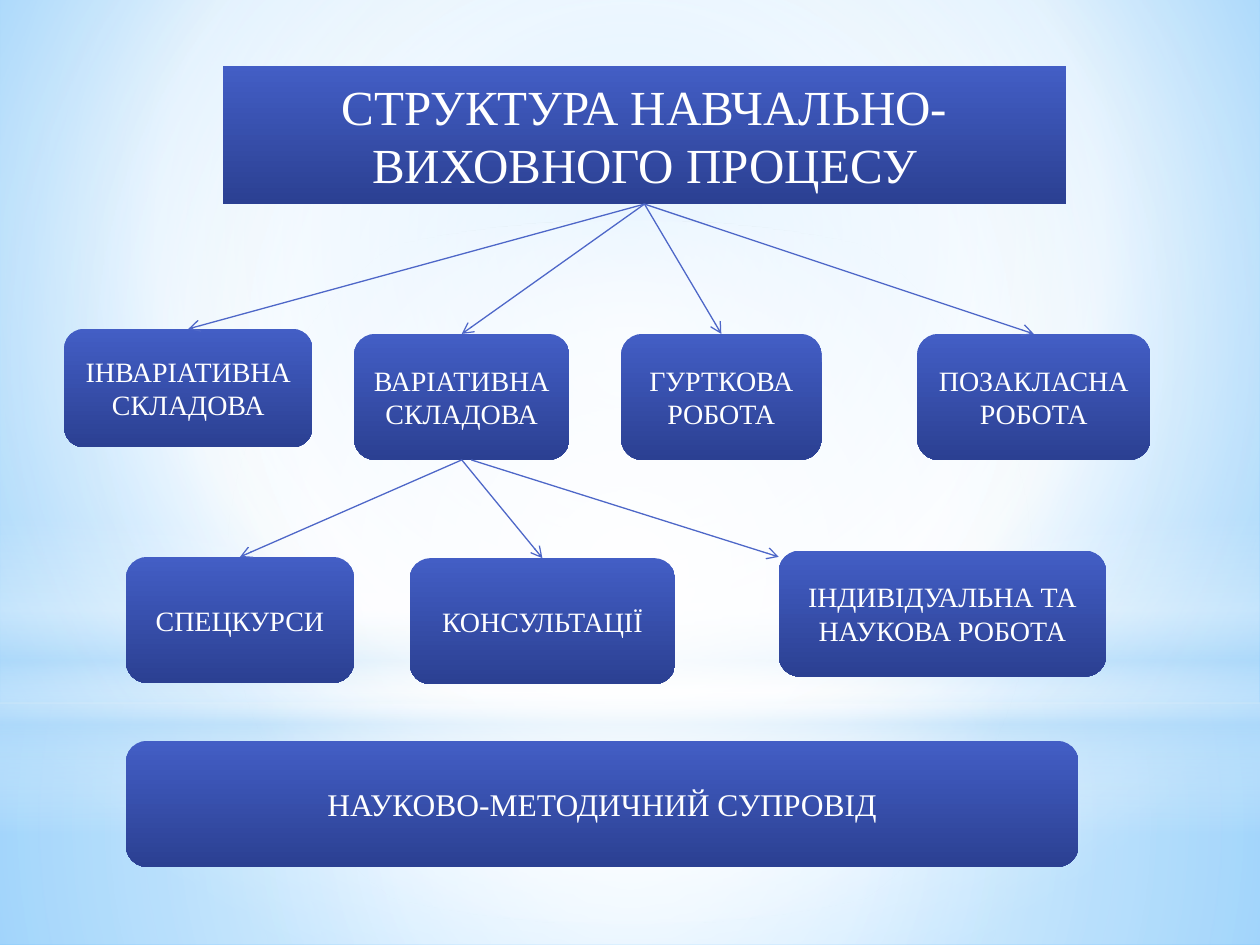
from lxml.etree import SubElement
from pptx import Presentation
from pptx.dml.color import RGBColor
from pptx.enum.shapes import MSO_CONNECTOR, MSO_SHAPE
from pptx.enum.text import MSO_ANCHOR, MSO_AUTO_SIZE, PP_ALIGN
from pptx.oxml import parse_xml
from pptx.oxml.ns import nsdecls, qn
from pptx.util import Inches, Pt

FONT = "Times New Roman"
WHITE = "FFFFFF"
ARROW_BLUE = "4E67C8"
SKY = "B4DCFA"
BOX_STOPS = [(0, "435EC5", 100), (100, "2B4092", 100)]


def paint_gradient(fill, stops, focus=None):
    marks = "".join(
        f'<a:gs pos="{position * 1000}"><a:srgbClr val="{color}">'
        f'<a:alpha val="{opacity * 1000}"/></a:srgbClr></a:gs>'
        for position, color, opacity in stops
    )
    direction = '<a:lin ang="5400000" scaled="0"/>'
    if focus:
        left, top, right, bottom = (share * 1000 for share in focus)
        direction = (
            f'<a:path path="circle"><a:fillToRect l="{left}" t="{top}" '
            f'r="{right}" b="{bottom}"/></a:path>'
        )
    fill.background()
    blank = fill._xPr.find(qn("a:noFill"))
    blank.getparent().replace(blank, parse_xml(
        f'<a:gradFill {nsdecls("a")} rotWithShape="1">'
        f"<a:gsLst>{marks}</a:gsLst>{direction}</a:gradFill>"
    ))


def write_box(box, wording, size):
    paint_gradient(box.fill, BOX_STOPS)
    box.line.fill.background()
    box.shadow.inherit = False
    frame = box.text_frame
    frame.word_wrap = True
    frame.auto_size = MSO_AUTO_SIZE.NONE
    frame.vertical_anchor = MSO_ANCHOR.MIDDLE
    paragraph = frame.paragraphs[0]
    paragraph.alignment = PP_ALIGN.CENTER
    run = paragraph.add_run()
    run.text = wording
    run.font.name = FONT
    run.font.size = Pt(size)
    run.font.color.rgb = RGBColor.from_string(WHITE)


deck = Presentation()
deck.slide_width = Inches(10)
deck.slide_height = Inches(7.5)
column = deck.slide_width / 100
row = deck.slide_height / 75
slide = deck.slides.add_slide(deck.slide_layouts[5])
shapes = slide.shapes

paint_gradient(
    slide.background.fill,
    [(0, "9ED5FF", 100), (60, WHITE, 100), (100, "5BB9FF", 100)],
    (20, 10, 20, 60),
)

center = (50, 50, 50, 50)
backdrop = [
    (MSO_SHAPE.RECTANGLE, 55.8, 19.2, center,
     [(0, WHITE, 91), (37, WHITE, 76), (100, SKY, 79)]),
    (MSO_SHAPE.RECTANGLE, 0, 55.8, center,
     [(0, WHITE, 89), (48, WHITE, 62), (100, SKY, 79)]),
    (MSO_SHAPE.RECTANGLE, 41.2, 25, None,
     [(0, WHITE, 0), (29, WHITE, 30), (45, SKY, 40),
      (55, WHITE, 26), (65, SKY, 60), (100, WHITE, 0)]),
    (MSO_SHAPE.OVAL, 17.5, 55.8, center,
     [(0, WHITE, 100), (56, WHITE, 0)]),
]
for outline, top, height, focus, stops in backdrop:
    glow = shapes.add_shape(
        outline, 0, int(top * row), deck.slide_width, int(height * row)
    )
    paint_gradient(glow.fill, stops, focus)
    glow.line.fill.background()
    glow.shadow.inherit = False

heading = shapes.title
heading.left, heading.top = int(17.7 * column), int(5.2 * row)
heading.width, heading.height = int(66.9 * column), int(11 * row)
write_box(heading, "СТРУКТУРА НАВЧАЛЬНО-ВИХОВНОГО ПРОЦЕСУ", 28)
shapes._spTree.append(heading._element)

parts = [
    ("ІНВАРІАТИВНА СКЛАДОВА", 5.1, 26.1, 19.7, 9.4, 16),
    ("ВАРІАТИВНА СКЛАДОВА", 28.1, 26.5, 17.1, 10, 16),
    ("ГУРТКОВА РОБОТА", 49.3, 26.5, 15.9, 10, 16),
    ("ПОЗАКЛАСНА РОБОТА", 72.8, 26.5, 18.5, 10, 16),
    ("СПЕЦКУРСИ", 10, 44.2, 18.1, 10, 16),
    ("КОНСУЛЬТАЦІЇ", 32.5, 44.3, 21.1, 10, 16),
    ("ІНДИВІДУАЛЬНА ТА НАУКОВА РОБОТА", 61.8, 43.7, 26, 10, 16),
    ("НАУКОВО-МЕТОДИЧНИЙ СУПРОВІД", 10, 58.8, 75.6, 10, 18),
]
boxes = []
for wording, left, top, width, height, size in parts:
    box = shapes.add_shape(
        MSO_SHAPE.ROUNDED_RECTANGLE, int(left * column), int(top * row),
        int(width * column), int(height * row),
    )
    write_box(box, wording, size)
    boxes.append(box)

invariant, variant, clubs, extracurricular, courses, consultations = boxes[:6]
branches = [
    (heading, invariant), (heading, variant), (heading, clubs),
    (heading, extracurricular), (variant, courses),
    (variant, consultations), (None, None),
]
for parent, child in branches:
    arrow = shapes.add_connector(
        MSO_CONNECTOR.STRAIGHT, int(37.4 * column), int(36.5 * row),
        int(61.8 * column), int(44.2 * row),
    )
    if parent:
        arrow.begin_connect(parent, 2)
        arrow.end_connect(child, 0)
    arrow.line.color.rgb = RGBColor.from_string(ARROW_BLUE)
    arrow.line.width = Pt(0.75)
    properties = arrow._element.spPr
    SubElement(properties.find(qn("a:ln")), qn("a:tailEnd"), type="arrow")
    SubElement(properties, qn("a:effectLst"))

deck.save("out.pptx")
